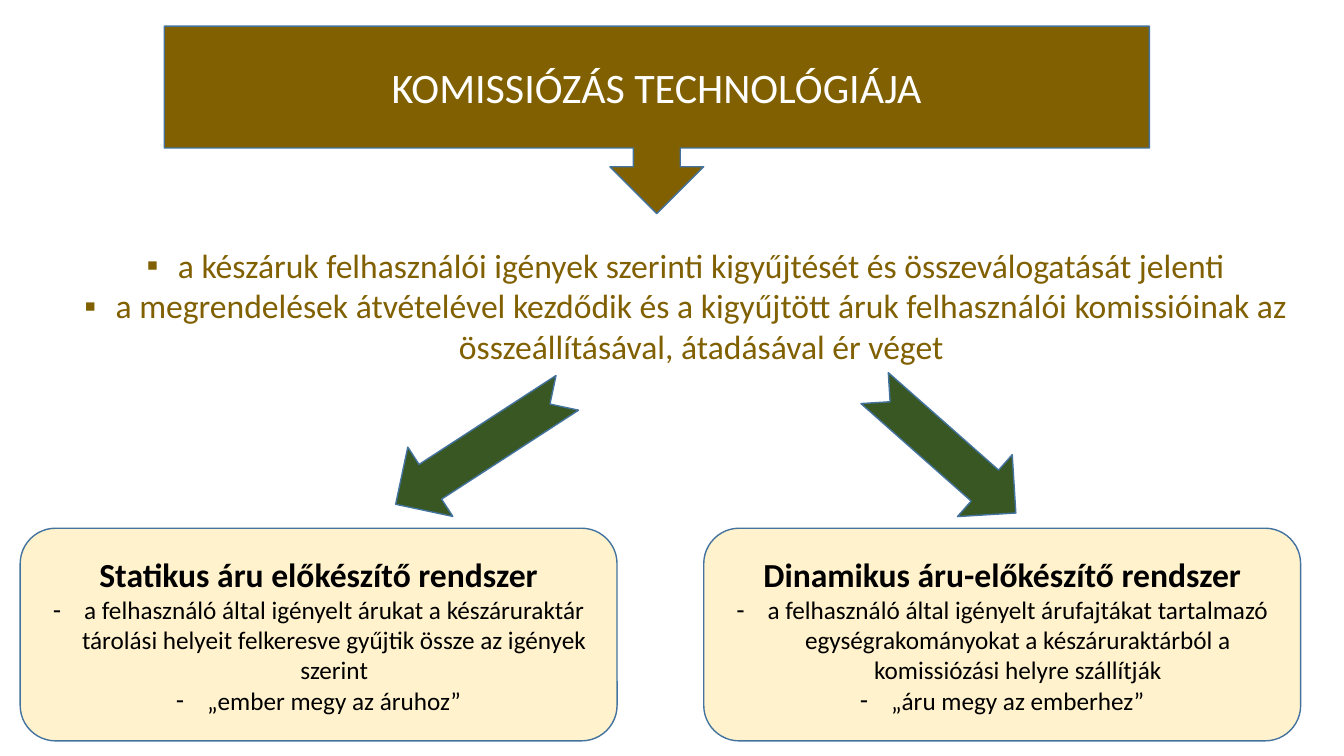
from lxml import etree
from pptx import Presentation
from pptx import util as u
from pptx.dml.color import RGBColor
from pptx.enum import shapes, text
from pptx.oxml.ns import qn

FONT = "Calibri"
BROWN, GREEN, CREAM, EDGE = "806000", "385723", "FFF2CC", "43739E"
WHITE, BLACK = "FFFFFF", "000000"
INDENT = u.Inches(0.31)

TITLE = "KOMISSIÓZÁS TECHNOLÓGIÁJA"
DEFINITION = [
    "a készáruk felhasználói igények szerinti kigyűjtését és összeválogatását jelenti",
    "a megrendelések átvételével kezdődik és a kigyűjtött áruk felhasználói "
    "komissióinak az összeállításával, átadásával ér véget",
]
# left edge, heading, points
SYSTEMS = [
    (0.2, "Statikus áru előkészítő rendszer", [
        "a felhasználó által igényelt árukat a készáruraktár tárolási helyeit "
        "felkeresve gyűjtik össze az igények szerint",
        "„ember megy az áruhoz”"]),
    (6.98, "Dinamikus áru-előkészítő rendszer", [
        "a felhasználó által igényelt árufajtákat tartalmazó egységrakományokat "
        "a készáruraktárból a komissiózási helyre szállítják",
        "„áru megy az emberhez”"]),
]
# left, top, width, rotation
ARROWS = [(3.76, 4.04, 2.03, 147), (8.44, 4.06, 1.87, 41.5)]


def colour(code):
    return RGBColor.from_string(code)


def place(shape, left, top, width, height):
    shape.left, shape.top = u.Inches(left), u.Inches(top)
    shape.width, shape.height = u.Inches(width), u.Inches(height)


def add_block(page, kind, bounds, fill):
    block = page.shapes.add_shape(kind, *map(u.Inches, bounds))
    block.shadow.inherit = False
    block.fill.solid()
    block.fill.fore_color.rgb = colour(fill)
    block.line.color.rgb = colour(EDGE)
    block.line.width = u.Pt(1)
    return block


def set_bullet(para, mark):
    """Give the paragraph a hanging bullet."""
    properties = para._p.get_or_add_pPr()
    properties.set("marL", str(INDENT))
    properties.set("indent", str(-INDENT))
    etree.SubElement(properties, qn("a:buFont")).set("typeface", "Arial")
    etree.SubElement(properties, qn("a:buChar")).set("char", mark)


def write(frame, lines, ink, anchor):
    """Fill a frame with centred lines of (wording, size, bold, bullet)."""
    frame.word_wrap = True
    frame.auto_size = text.MSO_AUTO_SIZE.NONE
    frame.vertical_anchor = anchor
    for index, (wording, size, bold, bullet) in enumerate(lines):
        para = frame.add_paragraph() if index else frame.paragraphs[0]
        para.text = wording
        para.alignment = text.PP_ALIGN.CENTER
        para.space_before = u.Pt(0)
        if bullet:
            set_bullet(para, bullet)
        para.font.name = FONT
        para.font.size = u.Pt(size)
        para.font.bold = bold
        para.font.color.rgb = colour(ink)


def add_system(page, left, heading, points):
    box = add_block(page, shapes.MSO_SHAPE.ROUNDED_RECTANGLE,
                    (left, 5.24, 5.92, 2.11), CREAM)
    lines = [(heading, 24, True, None)]
    lines += [(point, 18, False, "-") for point in points]
    write(box.text_frame, lines, BLACK, text.MSO_ANCHOR.MIDDLE)


def main():
    deck = Presentation()
    deck.slide_width, deck.slide_height = u.Inches(13.33), u.Inches(7.5)
    page = deck.slides.add_slide(deck.slide_layouts[1])
    title, body = page.placeholders

    callout = add_block(page, shapes.MSO_SHAPE.DOWN_ARROW_CALLOUT,
                        (1.63, 0.26, 9.77, 1.86), BROWN)
    title._element.addprevious(callout._element)
    place(title, 1.63, 0.26, 9.77, 1.21)
    write(title.text_frame, [(TITLE, 30, False, None)], WHITE, text.MSO_ANCHOR.MIDDLE)

    place(body, 0.56, 2.38, 12.48, 1.62)
    write(body.text_frame, [(point, 24, False, "▪") for point in DEFINITION],
          BROWN, text.MSO_ANCHOR.TOP)

    for left, top, width, angle in ARROWS:
        arrow = add_block(page, shapes.MSO_SHAPE.NOTCHED_RIGHT_ARROW,
                          (left, top, width, 0.82), GREEN)
        arrow.rotation = angle
    for system in SYSTEMS:
        add_system(page, *system)
    deck.save("out.pptx")


if __name__ == "__main__":
    main()
